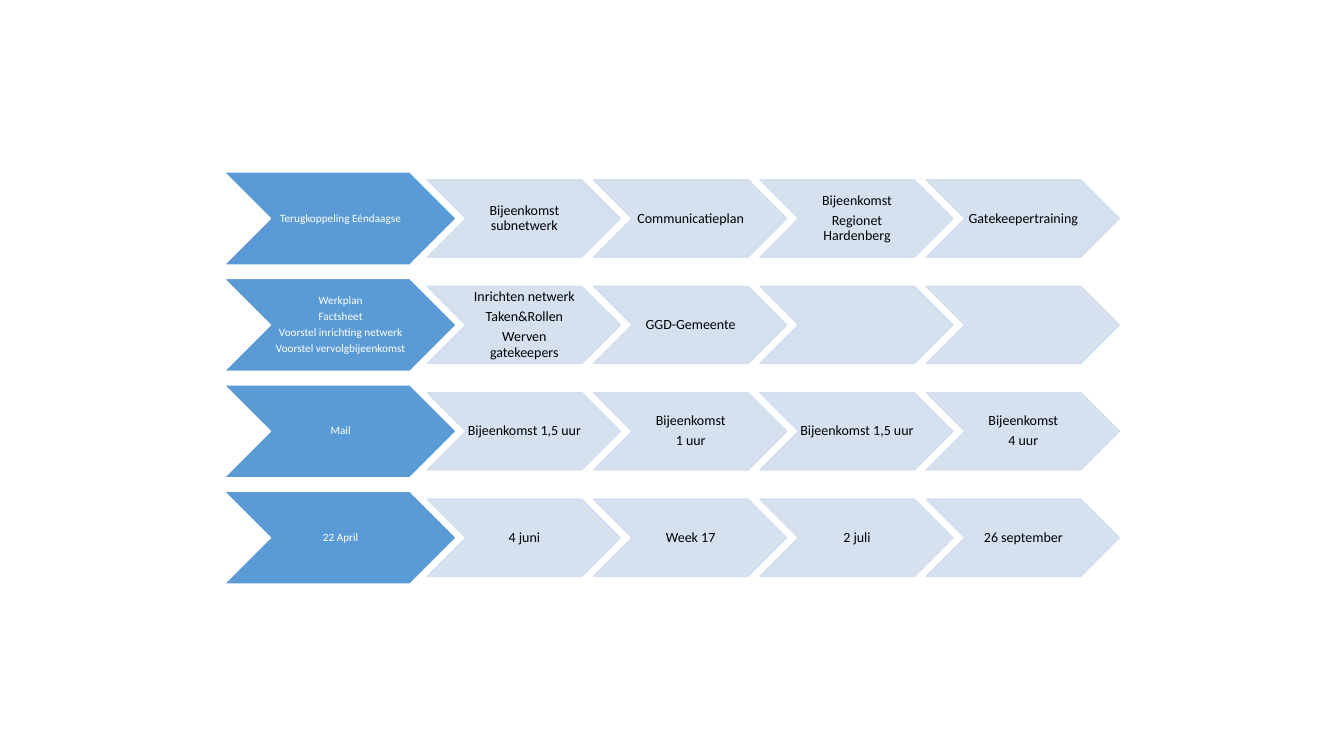
from lxml import etree
from pptx import Presentation
from pptx.dml.color import RGBColor
from pptx.enum.shapes import MSO_SHAPE
from pptx.enum.text import MSO_ANCHOR, PP_ALIGN
from pptx.oxml.ns import qn
from pptx.util import Pt

CHEVRON = MSO_SHAPE.CHEVRON
MIDDLE = MSO_ANCHOR.MIDDLE
CENTER = PP_ALIGN.CENTER

FONT = "Calibri"
COLORS = {
    "lead": "5B9BD5",
    "step": "D2DEEF",
    "white": "FFFFFF",
    "black": "000000",
}

# Layout in points
LEAD_LEFT, LEAD_TOP = 160, 122.9
LEAD_WIDTH, LEAD_HEIGHT = 166, 66.4
STEP_LEFT, STEP_PITCH = 305.2, 118.8
STEP_WIDTH, STEP_HEIGHT = 138, 55.2
ROW_PITCH = 76

# Each row: lead chevron, then its steps; each text is a list of paragraphs
ROWS = [
    [["Terugkoppeling Eéndaagse"], ["Bijeenkomst subnetwerk"], ["Communicatieplan"],
     ["Bijeenkomst", "Regionet Hardenberg"], ["Gatekeepertraining"]],
    [["Werkplan", "Factsheet", "Voorstel inrichting netwerk", "Voorstel vervolgbijeenkomst"],
     ["Inrichten netwerk", "Taken&Rollen", "Werven gatekeepers"], ["GGD-Gemeente"], [], []],
    [["Mail"], ["Bijeenkomst 1,5 uur"], ["Bijeenkomst", "1 uur"],
     ["Bijeenkomst 1,5 uur"], ["Bijeenkomst", "4 uur"]],
    [["22 April"], ["4 juni"], ["Week 17"], ["2 juli"], ["26 september"]],
]


def write_text(frame, lines, *, size, color):
    frame.word_wrap = True
    frame.vertical_anchor = MIDDLE
    frame.margin_left = frame.margin_top = frame.margin_bottom = Pt(0.7)
    frame.margin_right = 0
    for index, line in enumerate(lines):
        paragraph = frame.paragraphs[0] if index == 0 else frame.add_paragraph()
        paragraph.alignment = CENTER
        paragraph.line_spacing = 0.9
        paragraph.space_after = Pt(0.35 * size)
        run = paragraph.add_run()
        run.text = line
        run.font.name = FONT
        run.font.size = Pt(size)
        run.font.color.rgb = RGBColor.from_string(COLORS[color])


def set_opacity(chevron, percent):
    for color in chevron.fill._xPr.iter(qn("a:srgbClr")):
        etree.SubElement(color, qn("a:alpha"), val=str(percent * 1000))


def add_chevron(slide, left, top, width, height, *, fill, line):
    chevron = slide.shapes.add_shape(CHEVRON, Pt(left), Pt(top), Pt(width), Pt(height))
    chevron.shadow.inherit = False
    chevron.fill.solid()
    chevron.fill.fore_color.rgb = RGBColor.from_string(COLORS[fill])
    chevron.line.color.rgb = RGBColor.from_string(COLORS[line])
    chevron.line.width = Pt(1)
    return chevron


def add_lead(slide, top, lines):
    lead = add_chevron(slide, LEAD_LEFT, top, LEAD_WIDTH, LEAD_HEIGHT,
                       fill="lead", line="white")
    write_text(lead.text_frame, lines, size=8, color="white")


def add_step(slide, column, lead_top, lines):
    left = STEP_LEFT + column * STEP_PITCH
    top = lead_top + (LEAD_HEIGHT - STEP_HEIGHT) / 2
    step = add_chevron(slide, left, top, STEP_WIDTH, STEP_HEIGHT,
                       fill="step", line="step")
    set_opacity(step, 90)
    write_text(step.text_frame, lines, size=10, color="black")


def main():
    deck = Presentation()
    deck.slide_width, deck.slide_height = Pt(960), Pt(540)
    slide = deck.slides.add_slide(deck.slide_layouts[6])

    # Process rows
    for row, (lead, *steps) in enumerate(ROWS):
        top = LEAD_TOP + row * ROW_PITCH
        add_lead(slide, top, lead)
        for column, lines in enumerate(steps):
            add_step(slide, column, top, lines)

    deck.save("out.pptx")


if __name__ == "__main__":
    main()
